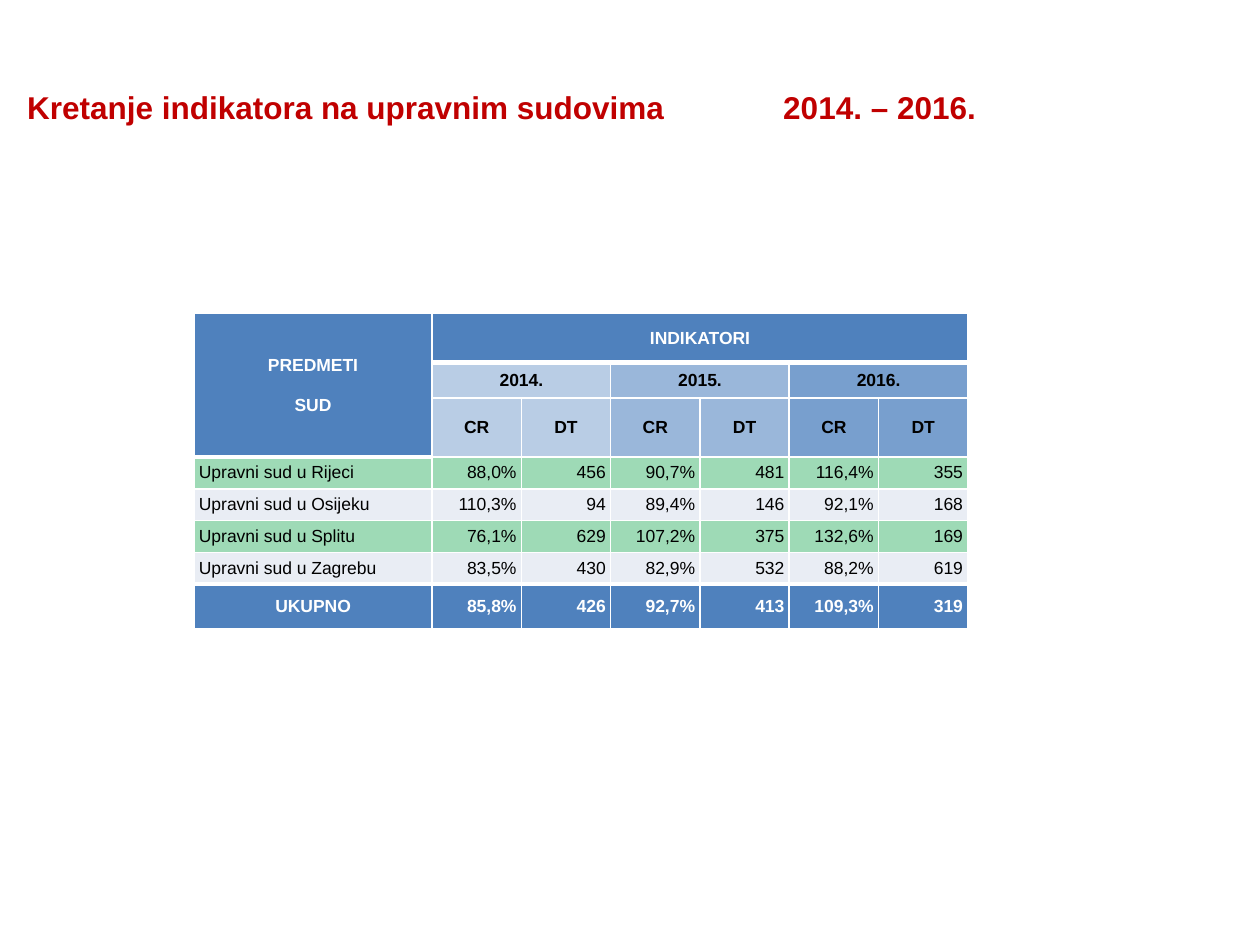
from dataclasses import dataclass

from lxml.etree import SubElement
from pptx import Presentation
from pptx.dml.color import RGBColor as Rgb
from pptx.enum.text import MSO_VERTICAL_ANCHOR as Anchor, PP_PARAGRAPH_ALIGNMENT as Align
from pptx.oxml.ns import qn
from pptx.util import Cm, Pt


@dataclass(frozen=True)
class Theme:
    font: str = "Arial"
    title_size: int = 18
    table_size: int = 10
    thin: int = 1
    thick: int = 3
    title: str = "C00000"
    header: str = "4F81BD"
    light: str = "FFFFFF"
    dark: str = "000000"
    years: tuple = ("B9CDE5", "9AB7DA", "789FCE")
    bands: tuple = ("9EDAB6", "E9EDF4")


THEME = Theme()
YEARS = ["2014.", "2015.", "2016."]
COURTS = [
    ["Upravni sud u Rijeci", "88,0%", "456", "90,7%", "481", "116,4%", "355"],
    ["Upravni sud u Osijeku", "110,3%", "94", "89,4%", "146", "92,1%", "168"],
    ["Upravni sud u Splitu", "76,1%", "629", "107,2%", "375", "132,6%", "169"],
    ["Upravni sud u Zagrebu", "83,5%", "430", "82,9%", "532", "88,2%", "619"],
]
TOTAL = ["UKUPNO", "85,8%", "426", "92,7%", "413", "109,3%", "319"]
COLUMN_WIDTHS = [4.8] + [1.8] * 6
ROW_HEIGHTS = [0.99, 0.71, 0.71] + [0.64] * len(COURTS) + [0.89]
FIRST_COURT = 3
TOTAL_ROW = FIRST_COURT + len(COURTS)


def style_paragraph(paragraph, size, color, bold):
    font = paragraph.font
    font.name = THEME.font
    font.size = Pt(size)
    font.bold = bold
    font.color.rgb = Rgb.from_string(color)


def add_title(slide, heading, period):
    title = slide.shapes.add_textbox(Cm(0), Cm(1.52), Cm(25.4), Cm(1.27))
    frame = title.text_frame
    frame.word_wrap = True
    frame.vertical_anchor = Anchor.MIDDLE
    frame.margin_left = Cm(0.55)
    paragraph = frame.paragraphs[0]
    paragraph.text = f"{heading}\t{period}"
    tabs = SubElement(paragraph._p.get_or_add_pPr(), qn("a:tabLst"))
    SubElement(tabs, qn("a:tab"), pos=str(Cm(15.24)), algn="l")
    style_paragraph(paragraph, THEME.title_size, THEME.title, True)


def rule_width(boundary, column):
    header_end = FIRST_COURT if column == 0 else 1
    return THEME.thick if boundary in (header_end, TOTAL_ROW) else THEME.thin


def draw_borders(cell, row, column):
    widths = {
        "a:lnL": THEME.thin,
        "a:lnR": THEME.thin,
        "a:lnT": rule_width(row, column),
        "a:lnB": rule_width(row + 1, column),
    }
    properties = cell._tc.get_or_add_tcPr()
    for edge, width in widths.items():
        line = SubElement(properties, qn(edge), w=str(Pt(width)))
        fill = SubElement(line, qn("a:solidFill"))
        SubElement(fill, qn("a:srgbClr"), val=THEME.light)


def fill_cell(cell, text, fill, color=THEME.dark, bold=True, align=Align.CENTER):
    cell.fill.solid()
    cell.fill.fore_color.rgb = Rgb.from_string(fill)
    cell.vertical_anchor = Anchor.MIDDLE
    cell.margin_top = cell.margin_bottom = 0
    cell.margin_left = Cm(0.1) if align == Align.LEFT else 0
    cell.margin_right = Cm(0.1) if align == Align.RIGHT else 0
    cell.text_frame.text = text
    for index, paragraph in enumerate(cell.text_frame.paragraphs):
        paragraph.alignment = align
        if index:
            paragraph.space_before = Pt(11.5)
        style_paragraph(paragraph, THEME.table_size, color, bold)


def fill_header(table):
    fill_cell(table.cell(0, 0), "PREDMETI\nSUD", THEME.header, THEME.light)
    fill_cell(table.cell(0, 1), "INDIKATORI", THEME.header, THEME.light)
    table.cell(0, 0).merge(table.cell(2, 0))
    table.cell(0, 1).merge(table.cell(0, 6))
    for index, (year, shade) in enumerate(zip(YEARS, THEME.years)):
        column = 1 + 2 * index
        fill_cell(table.cell(1, column), year, shade)
        table.cell(1, column).merge(table.cell(1, column + 1))
        for offset, indicator in enumerate(("CR", "DT")):
            fill_cell(table.cell(2, column + offset), indicator, shade)


def fill_row(table, row, values, fill, color, bold, name_align):
    for column, value in enumerate(values):
        align = Align.RIGHT if column else name_align
        fill_cell(table.cell(row, column), value, fill, color, bold, align)


def add_indicators(slide):
    table = slide.shapes.add_table(
        len(ROW_HEIGHTS), len(COLUMN_WIDTHS), Cm(3.91), Cm(6.32),
        Cm(sum(COLUMN_WIDTHS)), Cm(sum(ROW_HEIGHTS)),
    ).table
    table.first_row = table.horz_banding = False
    for column, width in zip(table.columns, COLUMN_WIDTHS):
        column.width = Cm(width)
    for row, height in enumerate(ROW_HEIGHTS):
        table.rows[row].height = Cm(height)
        for column in range(len(COLUMN_WIDTHS)):
            draw_borders(table.cell(row, column), row, column)
    fill_header(table)
    for index, court in enumerate(COURTS):
        band = THEME.bands[index % 2]
        fill_row(table, FIRST_COURT + index, court, band, THEME.dark, False, Align.LEFT)
    fill_row(table, TOTAL_ROW, TOTAL, THEME.header, THEME.light, True, Align.CENTER)


def main():
    presentation = Presentation()
    presentation.slide_width = Cm(25.4)
    presentation.slide_height = Cm(19.05)
    slide = presentation.slides.add_slide(presentation.slide_layouts[6])
    add_indicators(slide)
    add_title(slide, "Kretanje indikatora na upravnim sudovima", "2014. – 2016.")
    presentation.save("out.pptx")


if __name__ == "__main__":
    main()
